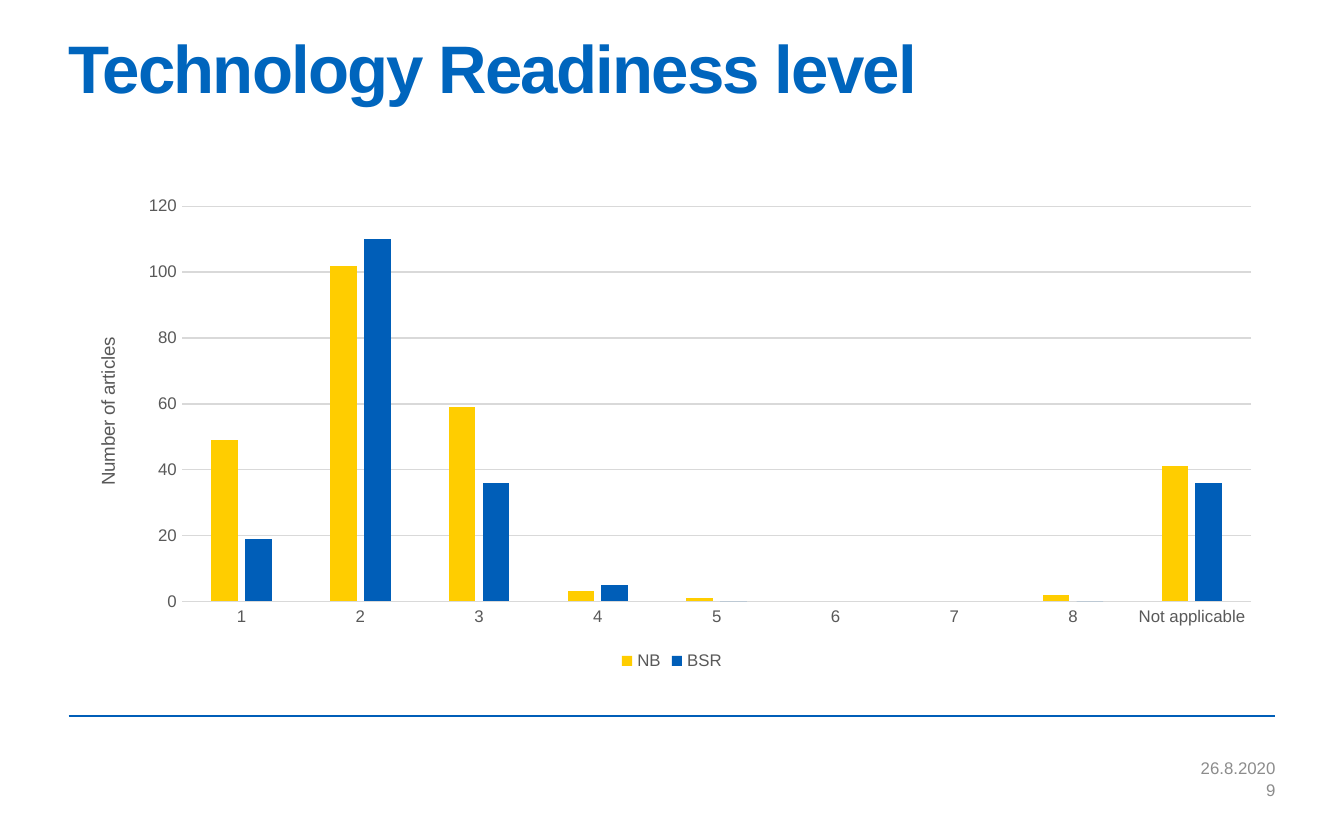
from dataclasses import dataclass

from lxml import etree
from pptx import Presentation
from pptx.chart.data import CategoryChartData
from pptx.dml.color import RGBColor
from pptx.enum.chart import XL_CHART_TYPE, XL_LEGEND_POSITION, XL_TICK_MARK
from pptx.enum.shapes import MSO_CONNECTOR
from pptx.enum.text import MSO_ANCHOR, PP_ALIGN
from pptx.oxml.ns import qn
from pptx.util import Inches, Pt

COLUMNS = XL_CHART_TYPE.COLUMN_CLUSTERED
LEGEND_BOTTOM = XL_LEGEND_POSITION.BOTTOM
NO_TICK = XL_TICK_MARK.NONE
STRAIGHT = MSO_CONNECTOR.STRAIGHT
TOP, MIDDLE = MSO_ANCHOR.TOP, MSO_ANCHOR.MIDDLE
LEFT, RIGHT = PP_ALIGN.LEFT, PP_ALIGN.RIGHT


@dataclass(frozen=True)
class Theme:
    font: str = "Arial"
    title: RGBColor = RGBColor(0x00, 0x65, 0xBD)
    blue: RGBColor = RGBColor(0x00, 0x5E, 0xB8)
    yellow: RGBColor = RGBColor(0xFF, 0xCD, 0x00)
    label: RGBColor = RGBColor(0x59, 0x59, 0x59)
    grid: RGBColor = RGBColor(0xD9, 0xD9, 0xD9)
    footer: RGBColor = RGBColor(0x8C, 0x8C, 0x8C)
    title_size: int = 36
    axis_title_size: int = 10
    small_size: int = 9


theme = Theme()


def style_font(font, size, color, bold=False):
    for name, value in {"name": theme.font, "size": Pt(size), "bold": bold}.items():
        setattr(font, name, value)
    font.color.rgb = color


def add_text(text, box, size, color, align, frame_format, bold=False):
    frame = slide.shapes.add_textbox(*box).text_frame
    for name, value in frame_format.items():
        setattr(frame, name, value)
    paragraph = frame.paragraphs[0]
    paragraph.alignment = align
    run = paragraph.add_run()
    run.text = text
    style_font(run.font, size, color, bold)
    return paragraph


deck = Presentation()
deck.slide_width, deck.slide_height = Inches(10), Inches(6.25)
slide = deck.slides.add_slide(deck.slide_layouts[6])

margin = Inches(0.51)
content_right = deck.slide_width - margin
content_width = content_right - margin

rule_top = Inches(5.33)
footer_rule = slide.shapes.add_connector(STRAIGHT, margin, rule_top, content_right, rule_top)
footer_rule.line.color.rgb = theme.blue
footer_rule.line.width = Pt(1)
etree.SubElement(footer_rule._element.spPr, qn("a:effectLst"))

title_format = {"word_wrap": True, "vertical_anchor": TOP, "margin_left": 0,
                "margin_top": 0, "margin_right": 0, "margin_bottom": 0}
heading = add_text("Technology Readiness level",
                   (margin, Inches(0.29), content_width, Inches(1.09)),
                   theme.title_size, theme.title, LEFT, title_format, bold=True)
heading.line_spacing = 0.85
heading.runs[0].font._element.set("spc", "-100")

footer_format = {"word_wrap": True, "vertical_anchor": MIDDLE, "margin_left": Inches(0.1),
                 "margin_top": Inches(0.05), "margin_right": 0, "margin_bottom": Inches(0.05)}
footer_left = Inches(5.53)
for text, top, height in (("26.8.2020", 5.63, 0.17), ("9", 5.8, 0.15)):
    add_text(text, (footer_left, Inches(top), content_right - footer_left, Inches(height)),
             theme.small_size, theme.footer, RIGHT, footer_format)

readiness = CategoryChartData()
readiness.categories = ["1", "2", "3", "4", "5", "6", "7", "8", "Not applicable"]
readiness.add_series("NB", [49, 102, 59, 3, 1, None, None, 2, 41])
readiness.add_series("BSR", [19, 110, 36, 5, 0, None, None, 0, 36])
chart = slide.shapes.add_chart(COLUMNS, margin, Inches(1.39), content_width,
                               Inches(3.64), readiness).chart
style_font(chart.font, theme.small_size, theme.label)
chart.has_title = False
chart.has_legend = True
for name, value in {"position": LEGEND_BOTTOM, "include_in_layout": False}.items():
    setattr(chart.legend, name, value)
style_font(chart.legend.font, theme.small_size, theme.label)

plot = chart.plots[0]
for name, value in {"gap_width": 219, "overlap": -27, "vary_by_categories": False}.items():
    setattr(plot, name, value)
for series, color in zip(plot.series, (theme.yellow, theme.blue)):
    series.format.fill.solid()
    series.format.fill.fore_color.rgb = color
    series.invert_if_negative = False

levels, articles = chart.category_axis, chart.value_axis
for axis in (levels, articles):
    axis.major_tick_mark = axis.minor_tick_mark = NO_TICK
    style_font(axis.tick_labels.font, theme.small_size, theme.label)
for name, value in {"minimum_scale": 0, "maximum_scale": 120, "major_unit": 20,
                    "has_major_gridlines": True}.items():
    setattr(articles, name, value)
articles.format.line.fill.background()
for line in (levels.format.line, articles.major_gridlines.format.line):
    line.color.rgb = theme.grid
    line.width = Pt(0.75)

axis_caption = articles.axis_title.text_frame
axis_caption.text = "Number of articles"
style_font(axis_caption.paragraphs[0].runs[0].font, theme.axis_title_size, theme.label)

deck.save("out.pptx")
